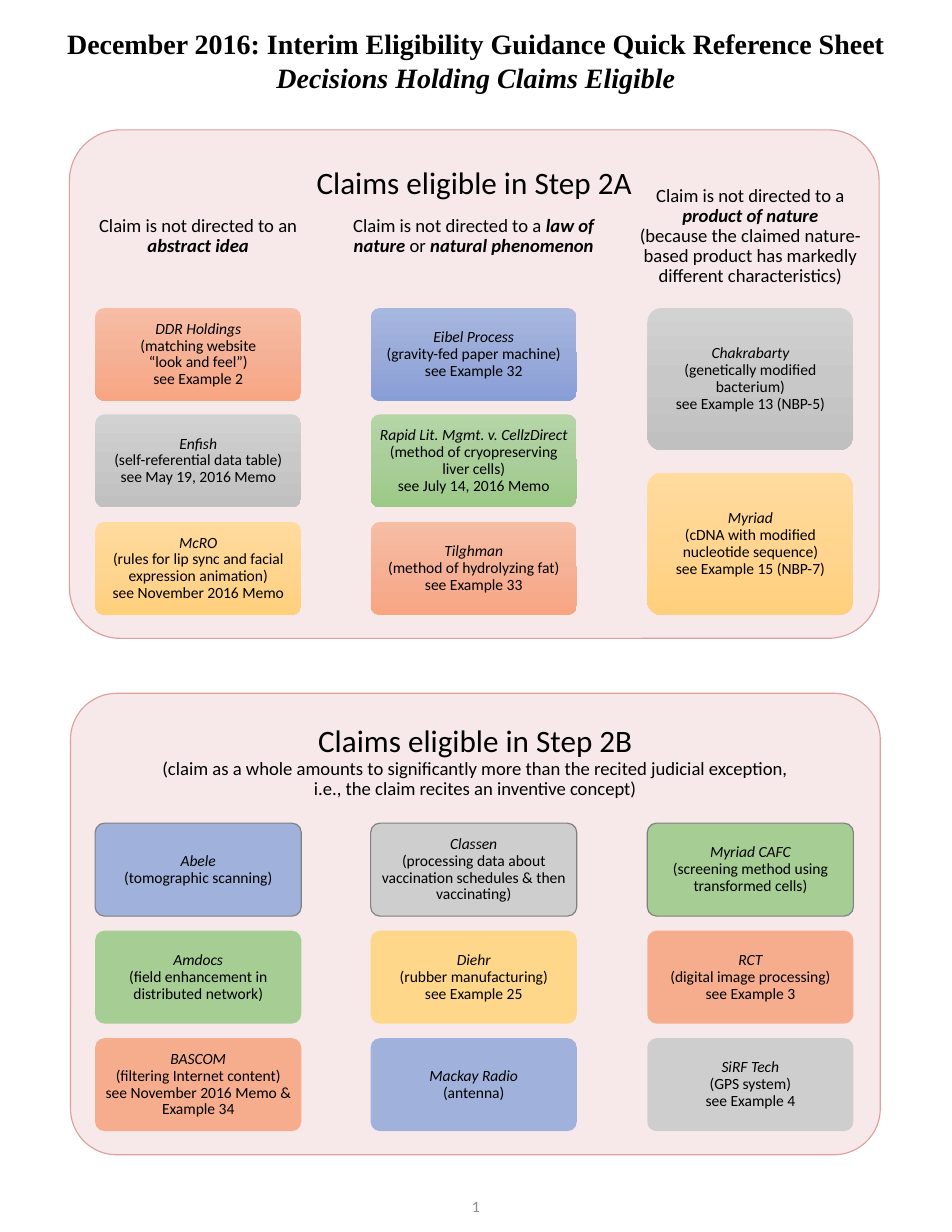
from copy import deepcopy
from typing import NamedTuple

from pptx import Presentation
from pptx.dml.color import RGBColor
from pptx.enum.shapes import MSO_SHAPE
from pptx.enum.text import MSO_ANCHOR, MSO_AUTO_SIZE, PP_ALIGN
from pptx.oxml.ns import qn
from pptx.util import Emu, Pt

ROUND = MSO_SHAPE.ROUNDED_RECTANGLE
TOP, MIDDLE = MSO_ANCHOR.TOP, MSO_ANCHOR.MIDDLE
CENTER = PP_ALIGN.CENTER
NO_FIT = MSO_AUTO_SIZE.NONE
SCALE = 9144  # EMU per px, 100 px to the inch

LEFTS = (85, 331, 578)  # card columns
CARD_W = 184
HEAD_W = 230

# Flat colour, then the three gradient stops
TINTS = {
    "orange": ("F6AD8E", "F7BDA5", "F5B196", "F8A582"),
    "gray": ("CECECE", "D2D2D2", "C8C8C8", "C0C0C0"),
    "gold": ("FFD78B", "FFDB9E", "FFD590", "FFD07C"),
    "blue": ("A0B1DC", "A8B7DF", "9AABD9", "889ED7"),
    "green": ("A6CD93", "B5D5A7", "AACE9A", "9CC987"),
}


class Run(NamedTuple):
    text: str
    size: float = 12
    bold: bool = False
    italic: bool = False


class Card(NamedTuple):
    name: str
    note: str
    tint: str


class Column(NamedTuple):
    head: list[Run]
    cards: list[Card]


def strong(text: str) -> Run:
    return Run(text, bold=True, italic=True)


STEP_A = [
    Column([Run("Claim is not directed to an "), strong("abstract idea")], [
        Card("DDR Holdings", "(matching website\n“look and feel”)\nsee Example 2", "orange"),
        Card("Enfish", "(self-referential data table)\nsee May 19, 2016 Memo", "gray"),
        Card("McRO", "(rules for lip sync and facial expression animation)\n"
             "see November 2016 Memo", "gold"),
    ]),
    Column([Run("Claim is not directed to a "), strong("law of nature"),
            Run(" or "), strong("natural phenomenon")], [
        Card("Eibel Process", "(gravity-fed paper machine)\nsee Example 32", "blue"),
        Card("Rapid Lit. Mgmt. v. CellzDirect",
             "(method of cryopreserving liver cells)\nsee July 14, 2016 Memo", "green"),
        Card("Tilghman", "(method of hydrolyzing fat)\nsee Example 33", "orange"),
    ]),
    Column([Run("Claim is not directed to a "), strong("product of nature\n"),
            Run("(because the claimed nature-based product has markedly "
                "different characteristics)")], [
        Card("Chakrabarty", "(genetically modified bacterium)\nsee Example 13 (NBP-5)", "gray"),
        Card("Myriad", "(cDNA with modified nucleotide sequence)\n"
             "see Example 15 (NBP-7)", "gold"),
    ]),
]

STEP_B = [
    Column([], [
        Card("Abele", "(tomographic scanning)", "blue"),
        Card("Amdocs", "(field enhancement in distributed network)", "green"),
        Card("BASCOM", "(filtering Internet content)\n"
             "see November 2016 Memo & Example 34", "orange"),
    ]),
    Column([], [
        Card("Classen", "(processing data about vaccination schedules & then vaccinating)", "gray"),
        Card("Diehr", "(rubber manufacturing)\nsee Example 25", "gold"),
        Card("Mackay Radio", "(antenna)", "blue"),
    ]),
    Column([], [
        Card("Myriad CAFC", "(screening method using transformed cells)", "green"),
        Card("RCT", "(digital image processing)\nsee Example 3", "orange"),
        Card("SiRF Tech", "(GPS system)\nsee Example 4", "gray"),
    ]),
]


def px(n: float) -> Emu:
    return Emu(round(n) * SCALE)


def rgb(code: str) -> RGBColor:
    return RGBColor.from_string(code)


def write(shape, runs: list[Run], *, font: str = "Calibri", color: str = "000000",
          anchor=MIDDLE, pad: tuple[int, int] = (5, 5), space: float = 0.9) -> None:
    """Fill a shape with one centred paragraph; pad is (sides, top and bottom)."""
    frame = shape.text_frame
    frame.word_wrap = True
    frame.auto_size = NO_FIT
    frame.vertical_anchor = anchor
    frame.margin_left = frame.margin_right = px(pad[0])
    frame.margin_top = frame.margin_bottom = px(pad[1])
    para = frame.paragraphs[0]
    para.alignment = CENTER
    para.line_spacing = space
    for run in runs:
        for i, line in enumerate(run.text.split("\n")):
            if i:
                para.add_line_break()
            if not line:
                continue
            part = para.add_run()
            part.text = line
            part.font.name = font
            part.font.size = Pt(run.size)
            part.font.bold = run.bold
            part.font.italic = run.italic
            part.font.color.rgb = rgb(color)


def add_box(slide, x: float, y: float, w: float, h: float, fills: tuple[str, ...],
            line: str = ""):
    """Add a rounded box with one flat colour or three gradient stops."""
    box = slide.shapes.add_shape(ROUND, px(x), px(y), px(w), px(h))
    box.adjustments[0] = 0.1
    box.shadow.inherit = False
    if len(fills) == 1:
        box.fill.solid()
        box.fill.fore_color.rgb = rgb(fills[0])
    else:
        box.fill.gradient()
        box.fill.gradient_angle = 270
        stops = box._element.spPr.find(".//" + qn("a:gsLst"))
        stops.insert(1, deepcopy(stops[0]))
        for stop, code, place in zip(box.fill.gradient_stops, fills, (0, 0.5, 1)):
            stop.color.rgb = rgb(code)
            stop.position = place
    if line:
        box.line.color.rgb = rgb(line)
        box.line.width = Pt(0.75)
    else:
        box.line.fill.background()
    return box


def add_label(slide, x: int, y: int, w: int, h: int, runs: list[Run], **style) -> None:
    write(slide.shapes.add_textbox(px(x), px(y), px(w), px(h)), runs, **style)


def add_panel(slide, x: int, y: int, h: int, runs: list[Run], pad: int) -> None:
    box = add_box(slide, x, y, 723, h, ("F7E9E9",), "DD9F9F")
    write(box, runs, anchor=TOP, pad=(8, pad))


def add_cards(slide, x: int, top: int, end: int, cards: list[Card], shaded: bool) -> None:
    """Spread a column of cards evenly from top to end."""
    tall = len(cards) == 2
    h = 127 if tall else 83
    step = (end - top - h) / (len(cards) - 1)
    for i, card in enumerate(cards):
        flat, *grades = TINTS[card.tint]
        fills = tuple(grades) if shaded else (flat,)
        edge = "808080" if i == 0 and not shaded else ""
        box = add_box(slide, x, top + i * step, CARD_W, h, fills, edge)
        write(box, [Run(card.name + "\n", 10, italic=True), Run(card.note, 10)],
              pad=(7, 6) if tall else (5, 5))


def main() -> None:
    deck = Presentation()
    deck.slide_width, deck.slide_height = px(850), px(1100)
    slide = deck.slides.add_slide(deck.slide_layouts[5])

    # Title
    title = slide.shapes.title
    title.left, title.top, title.width, title.height = px(0), px(19), px(850), px(71)
    write(title, [Run("December 2016: Interim Eligibility Guidance Quick Reference Sheet\n",
                      18, bold=True),
                  Run("Decisions Holding Claims Eligible", 18, bold=True, italic=True)],
          font="Times New Roman", anchor=TOP, pad=(10, 5), space=1.0)

    # Step 2A
    add_panel(slide, 62, 116, 454, [Run("Claims eligible in Step 2A", 20)], 20)
    for x, col in zip(LEFTS, STEP_A):
        add_label(slide, x - (HEAD_W - CARD_W) // 2, 148, HEAD_W, 126, col.head)
        add_cards(slide, x, 275, 549, col.cards, True)

    # Step 2B
    add_panel(slide, 63, 619, 412, [
        Run("Claims eligible in Step 2B\n", 20),
        Run("(claim as a whole amounts to significantly more than the recited "
            "judicial exception,\ni.e., the claim recites an inventive concept)")], 17)
    for x, col in zip(LEFTS, STEP_B):
        add_cards(slide, x, 735, 1010, col.cards, False)

    # Page number
    add_label(slide, 0, 1047, 850, 59, [Run("1", 10.2)], color="8C8C8C", space=1.0)

    deck.save("out.pptx")


if __name__ == "__main__":
    main()
